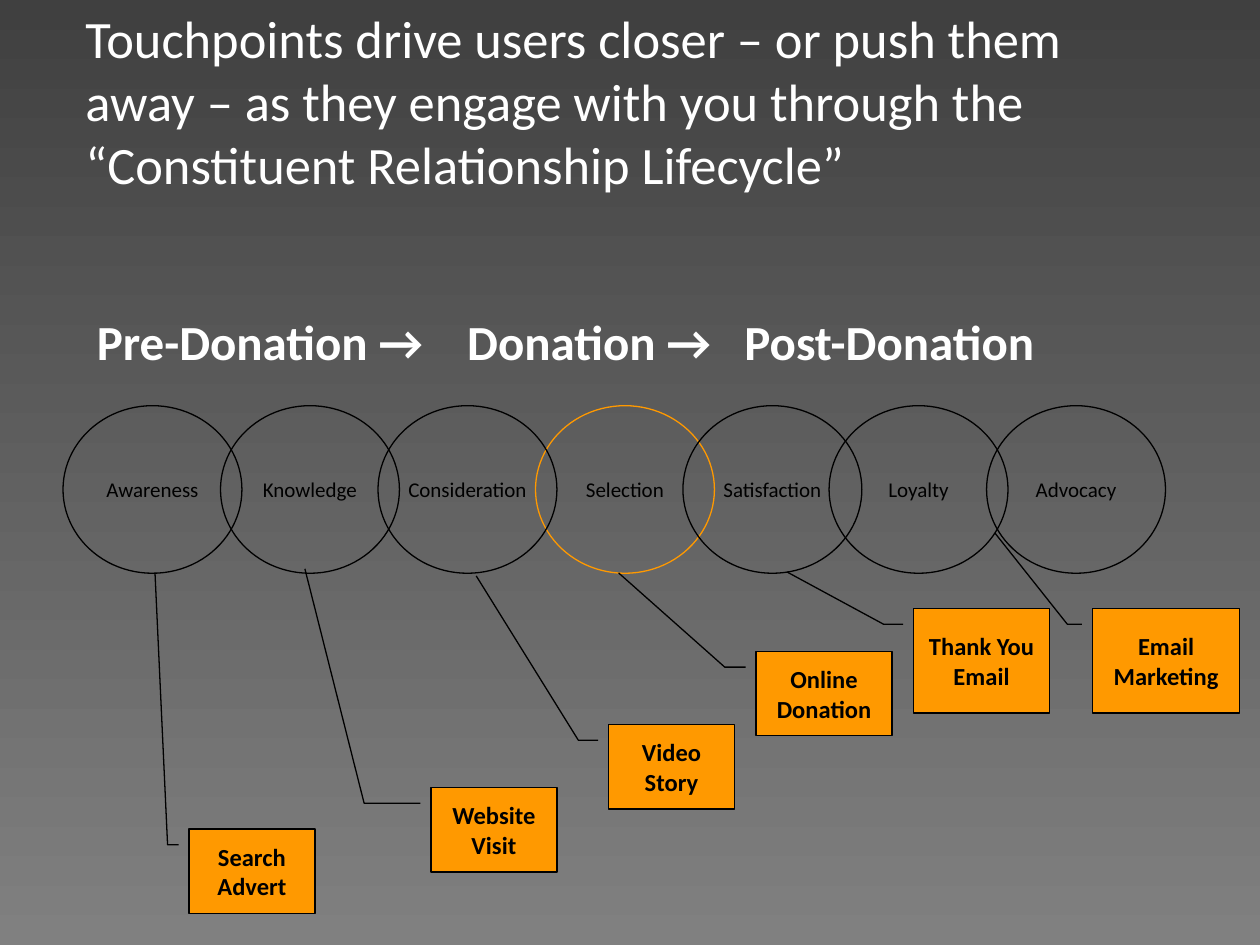
from lxml.etree import SubElement
from pptx import Presentation
from pptx.dml.color import RGBColor
from pptx.enum.shapes import MSO_SHAPE as SHAPE
from pptx.enum.text import MSO_ANCHOR as ANCHOR, MSO_AUTO_SIZE as AUTO_SIZE, PP_ALIGN as ALIGN
from pptx.oxml.ns import qn
from pptx.util import Inches, Pt

WHITE, BLACK, ORANGE = "FFFFFF", "000000", "FF9900"


def rgb(color):
    return RGBColor.from_string(color)


def write(shape, text, size, color, bold=False, align=ALIGN.LEFT, wrap=True):
    """Put one formatted run in the shape's first paragraph and return that paragraph."""
    shape.text_frame.word_wrap = wrap
    paragraph = shape.text_frame.paragraphs[0]
    paragraph.alignment = align
    run = paragraph.add_run()
    run.text = text
    run.font.name = "Calibri"
    run.font.size = Pt(size)
    run.font.bold = bold
    run.font.color.rgb = rgb(color)
    return paragraph


prs = Presentation()
prs.slide_width, prs.slide_height = Inches(10), Inches(7.5)
slide = prs.slides.add_slide(prs.slide_layouts[6])

backdrop = slide.background.fill
backdrop.gradient()
backdrop.gradient_angle = 270
for stop, color in zip(backdrop.gradient_stops, ("404040", "808080")):
    stop.color.rgb = rgb(color)

headline = slide.shapes.add_textbox(Inches(0.58), 0, Inches(8.67), Inches(2.12))
write(headline, "Touchpoints drive users closer – or push them away – as they engage "
      "with you through the “Constituent Relationship Lifecycle”", 30, WHITE)
headline.text_frame.auto_size = AUTO_SIZE.SHAPE_TO_FIT_TEXT

# The three phases share one line, spaced by tab stops
phases = slide.shapes.add_textbox(Inches(0.67), Inches(2.42), Inches(9), Inches(2.53))
phase_line = write(phases, "Pre-Donation →\tDonation →\tPost-Donation", 28, WHITE, bold=True)
tab_list = SubElement(phase_line._p.get_or_add_pPr(), qn("a:tabLst"))
for position in (2.94, 5.14):
    SubElement(tab_list, qn("a:tab"), pos=str(Inches(position)), algn="l")

# Lifecycle stages; Selection comes first so that its neighbours overlap it
stages = [
    ("Selection", 4.25, ORANGE),
    ("Awareness", 0.5, BLACK),
    ("Knowledge", 1.75, BLACK),
    ("Consideration", 3, BLACK),
    ("Satisfaction", 5.42, BLACK),
    ("Loyalty", 6.58, BLACK),
    ("Advocacy", 7.83, BLACK),
]
for name, left, outline in stages:
    stage = slide.shapes.add_shape(
        SHAPE.OVAL, Inches(left), Inches(3.22), Inches(1.42), Inches(1.33))
    stage.shadow.inherit = False
    stage.fill.background()
    stage.line.color.rgb = rgb(outline)
    stage.line.width = Pt(0.75)
    stage.text_frame.vertical_anchor = ANCHOR.MIDDLE
    write(stage, name, 12, BLACK, align=ALIGN.CENTER, wrap=False)

# Touchpoints: name, left, top, width, height, then the knee x, tip y and tip x
# of the leader line as fractions of the box
touchpoints = [
    ("Search Advert", 1.5, 6.58, 1, 0.67, -0.17, -3.04, -0.27),
    ("Website Visit", 3.42, 6.25, 1, 0.67, -0.53, -2.59, -1),
    ("Video Story", 4.83, 5.75, 1, 0.67, -0.24, -1.76, -1.05),
    ("Online Donation", 6, 5.17, 1.08, 0.67, -0.23, -0.93, -1.01),
    ("Thank You Email", 7.25, 4.83, 1.08, 0.83, -0.22, -0.35, -0.93),
    ("Email Marketing", 8.67, 4.83, 1.17, 0.83, -0.17, -0.72, -0.66),
]
LEADER_GAP, LEADER_DROP = 0.083, 0.125
for name, left, top, width, height, knee_x, tip_y, tip_x in touchpoints:
    touchpoint = slide.shapes.add_shape(
        SHAPE.LINE_CALLOUT_2, Inches(left), Inches(top), Inches(width), Inches(height))
    start_y, start_x = LEADER_DROP / height, -LEADER_GAP / width
    for i, value in enumerate((start_y, start_x, start_y, knee_x, tip_y, tip_x)):
        touchpoint.adjustments[i] = value
    touchpoint.shadow.inherit = False
    touchpoint.fill.solid()
    touchpoint.fill.fore_color.rgb = rgb(ORANGE)
    touchpoint.line.color.rgb = rgb(BLACK)
    touchpoint.line.width = Pt(0.75)
    touchpoint.text_frame.vertical_anchor = ANCHOR.MIDDLE
    write(touchpoint, name, 14, BLACK, bold=True, align=ALIGN.CENTER)

prs.save("out.pptx")
